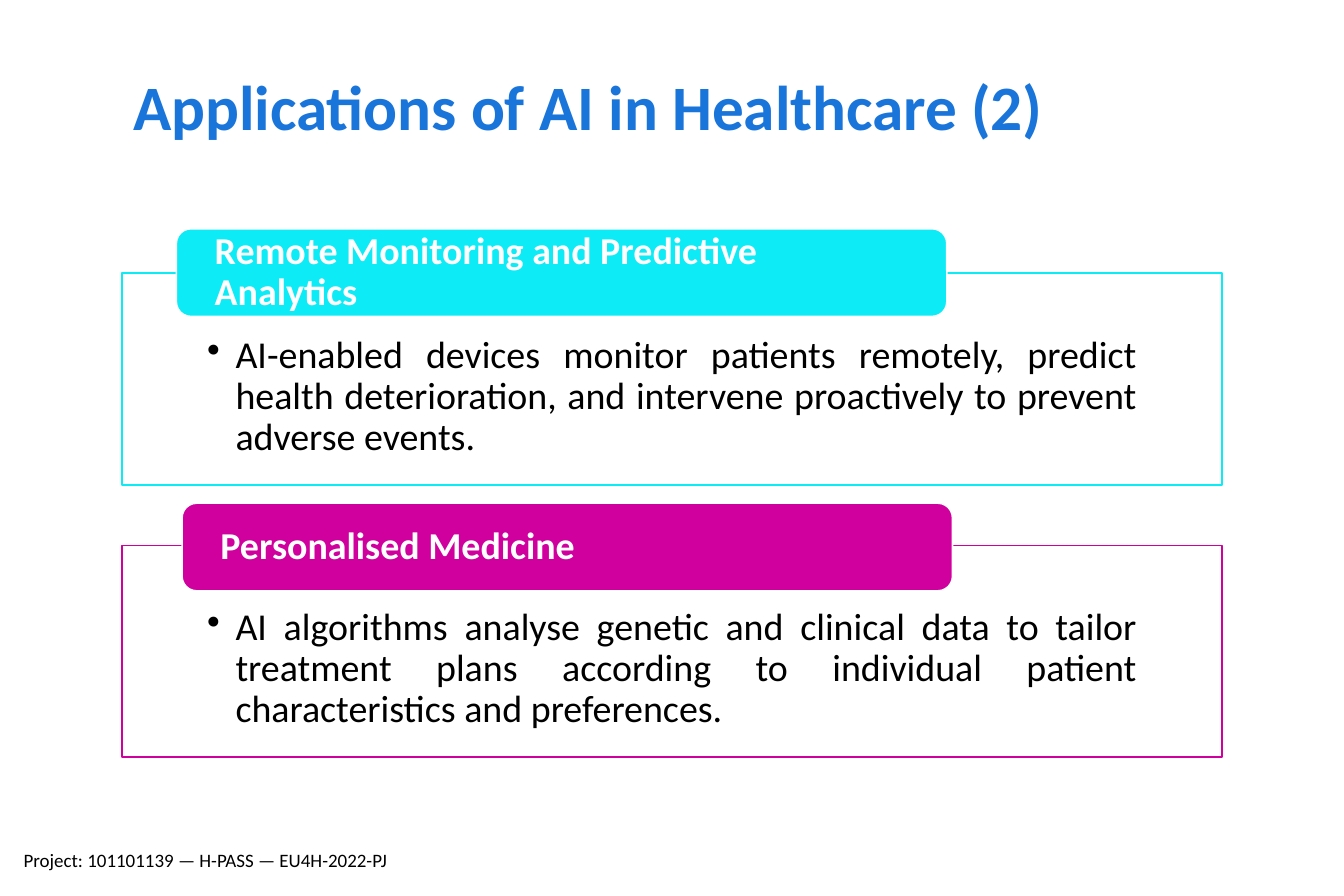
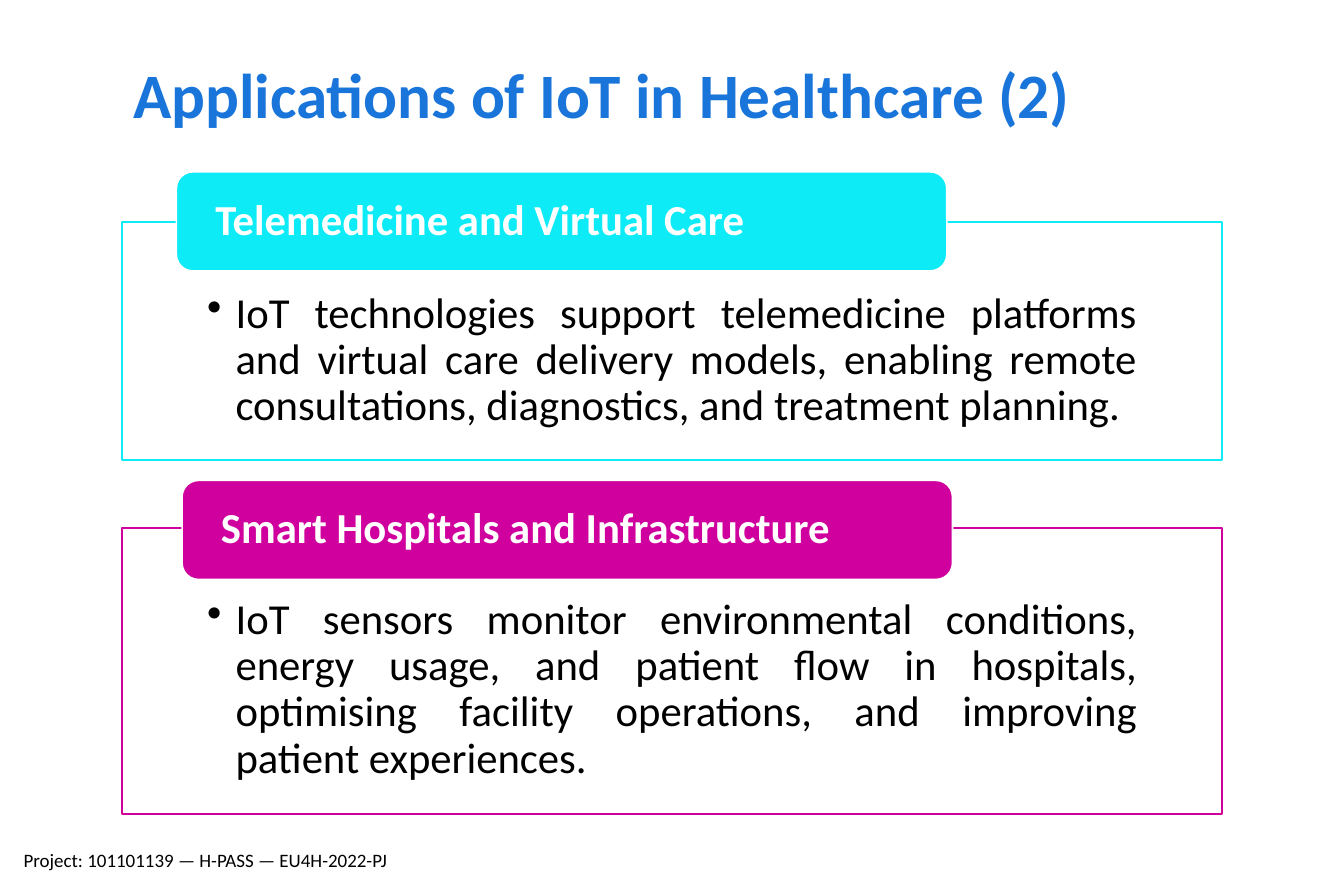
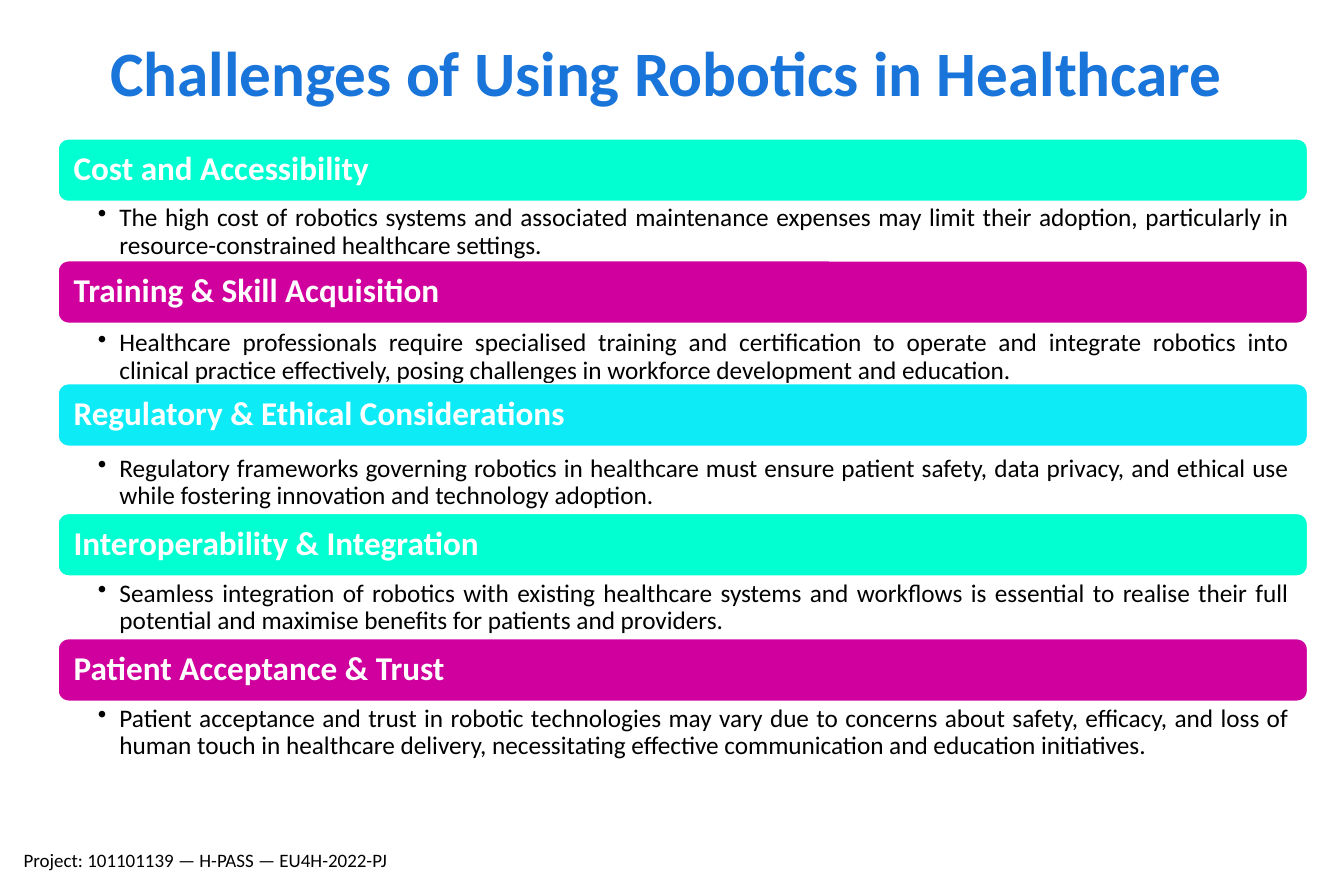
"""Build three slides on AI, IoT and robotics in healthcare."""
import pptx
import pptx.dml.color
import pptx.enum.shapes
import pptx.enum.text
import pptx.util
from lxml import etree
from pptx.util import Inches

RGBColor = pptx.dml.color.RGBColor
SHAPE = pptx.enum.shapes.MSO_SHAPE
ALIGN = pptx.enum.text.PP_ALIGN
ANCHOR = pptx.enum.text.MSO_ANCHOR

TITLE_BLUE = RGBColor(0x1A, 0x75, 0xDB)
CYAN = RGBColor(0x0C, 0xEB, 0xF6)
MAGENTA = RGBColor(0xD0, 0x00, 0x9E)
MINT = RGBColor(0x02, 0xFF, 0xD2)
WHITE = RGBColor(0xFF, 0xFF, 0xFF)
BLACK = RGBColor(0x00, 0x00, 0x00)
FONT = "Calibri"
FOOTER = "Project: 101101139 — H-PASS — EU4H-2022-PJ"


def write(shape, text, size, color, insets=(0.1, 0.05, 0.1, 0.05), bold=False,
          align=ALIGN.LEFT, anchor=ANCHOR.TOP, spacing=0.9, bullet_indent=None):
    frame = shape.text_frame
    frame.word_wrap = True
    frame.auto_size = pptx.enum.text.MSO_AUTO_SIZE.NONE
    frame.vertical_anchor = anchor
    frame.margin_left, frame.margin_top, frame.margin_right, frame.margin_bottom = map(Inches, insets)
    paragraph = frame.paragraphs[0]
    if bullet_indent:
        paragraph.level = 1
        properties = paragraph._p.get_or_add_pPr()
        properties.set("marL", str(Inches(bullet_indent)))
        properties.set("indent", str(-Inches(bullet_indent)))
        bullet = etree.SubElement(properties, pptx.oxml.ns.qn("a:buChar"))
        bullet.set("char", "•")
    paragraph.alignment = align
    paragraph.line_spacing = spacing
    run = paragraph.add_run()
    run.text = text
    run.font.name = FONT
    run.font.size = pptx.util.Pt(size)
    run.font.bold = bold
    run.font.color.rgb = color


def add_panel(slide, kind, box, fill, line):
    panel = slide.shapes.add_shape(kind, *map(Inches, box))
    panel.shadow.inherit = False
    if fill is None:
        panel.fill.background()
    else:
        panel.fill.solid()
        panel.fill.fore_color.rgb = fill
    panel.line.color.rgb = line
    panel.line.width = pptx.util.Pt(1)
    return panel


deck = pptx.Presentation()
deck.slide_width = Inches(11.81)
deck.slide_height = Inches(7.87)

titles = [
    ("Applications of AI in Healthcare (2)", (1.07, 0.62, 8.79, 0.63)),
    ("Applications of IoT in Healthcare (2)", (1.07, 0.51, 8.79, 0.63)),
    ("Challenges of Using Robotics in Healthcare", (0.87, 0.32, 10.26, 0.81)),
]
for heading, box in titles:
    slide = deck.slides.add_slide(deck.slide_layouts[5])
    title = slide.shapes.title
    title.left, title.top, title.width, title.height = map(Inches, box)
    write(title, heading, 40, TITLE_BLUE, bold=True, align=ALIGN.JUSTIFY)
    footer = slide.shapes.add_textbox(*map(Inches, (0.11, 7.4, 3.63, 0.27)))
    write(footer, FOOTER, 12, BLACK, spacing=1)

ai_slide, iot_slide, robotics_slide = deck.slides

applications = [
    (ai_slide, 24, 0.77, 0.55, [
        ("Remote Monitoring and Predictive Analytics",
         "AI-enabled devices monitor patients remotely, predict health deterioration, "
         "and intervene proactively to prevent adverse events.", 2.01, 2.4, 1.86),
        ("Personalised Medicine",
         "AI algorithms analyse genetic and clinical data to tailor treatment plans "
         "according to individual patient characteristics and preferences.", 4.42, 4.79, 1.86),
    ]),
    (iot_slide, 27, 0.87, 0.61, [
        ("Telemedicine and Virtual Care",
         "IoT technologies support telemedicine platforms and virtual care delivery models, "
         "enabling remote consultations, diagnostics, and treatment planning.", 1.51, 1.95, 2.09),
        ("Smart Hospitals and Infrastructure",
         "IoT sensors monitor environmental conditions, energy usage, and patient flow in hospitals, "
         "optimising facility operations, and improving patient experiences.", 4.22, 4.64, 2.51),
    ]),
]
for slide, size, label_height, top_inset, topics in applications:
    for topic, color, label_left in zip(topics, (CYAN, MAGENTA), (1.55, 1.6)):
        name, detail, label_top, top, height = topic
        outline = add_panel(slide, SHAPE.RECTANGLE, (1.07, top, 9.67, height), None, color)
        write(outline, detail, size, BLACK, insets=(0.75, top_inset, 0.75, 0.2),
              align=ALIGN.JUSTIFY, bullet_indent=0.25)
        label = add_panel(slide, SHAPE.ROUNDED_RECTANGLE,
                          (label_left, label_top, 6.77, label_height), color, WHITE)
        write(label, name, size, WHITE, insets=(0.3, 0, 0.3, 0), bold=True, anchor=ANCHOR.MIDDLE)

challenges = [
    ("Cost and Accessibility", MINT, 1.22,
     "The high cost of robotics systems and associated maintenance expenses may limit their "
     "adoption, particularly in resource-constrained healthcare settings."),
    ("Training & Skill Acquisition", MAGENTA, 2.29,
     "Healthcare professionals require specialised training and certification to operate and "
     "integrate robotics into clinical practice effectively, posing challenges in workforce "
     "development and education."),
    ("Regulatory & Ethical Considerations", CYAN, 3.37,
     "Regulatory frameworks governing robotics in healthcare must ensure patient safety, data "
     "privacy, and ethical use while fostering innovation and technology adoption."),
    ("Interoperability & Integration", MINT, 4.51,
     "Seamless integration of robotics with existing healthcare systems and workflows is "
     "essential to realise their full potential and maximise benefits for patients and providers."),
    ("Patient Acceptance & Trust", MAGENTA, 5.61,
     "Patient acceptance and trust in robotic technologies may vary due to concerns about safety, "
     "efficacy, and loss of human touch in healthcare delivery, necessitating effective "
     "communication and education initiatives."),
]
for row, (name, color, top, detail) in enumerate(challenges):
    band = add_panel(robotics_slide, SHAPE.ROUNDED_RECTANGLE, (0.51, top, 10.98, 0.55), color, WHITE)
    write(band, name, 21, WHITE, insets=(0.11, 0.05, 0.11, 0.05), bold=True, anchor=ANCHOR.MIDDLE)
    explanation = robotics_slide.shapes.add_textbox(
        *map(Inches, (0.51, 1.77 + 1.1 * row, 10.98, 0.55)))
    write(explanation, detail, 16, BLACK, insets=(0.35, 0.03, 0.16, 0.03),
          align=ALIGN.JUSTIFY, bullet_indent=0.19)

deck.save("out.pptx")
